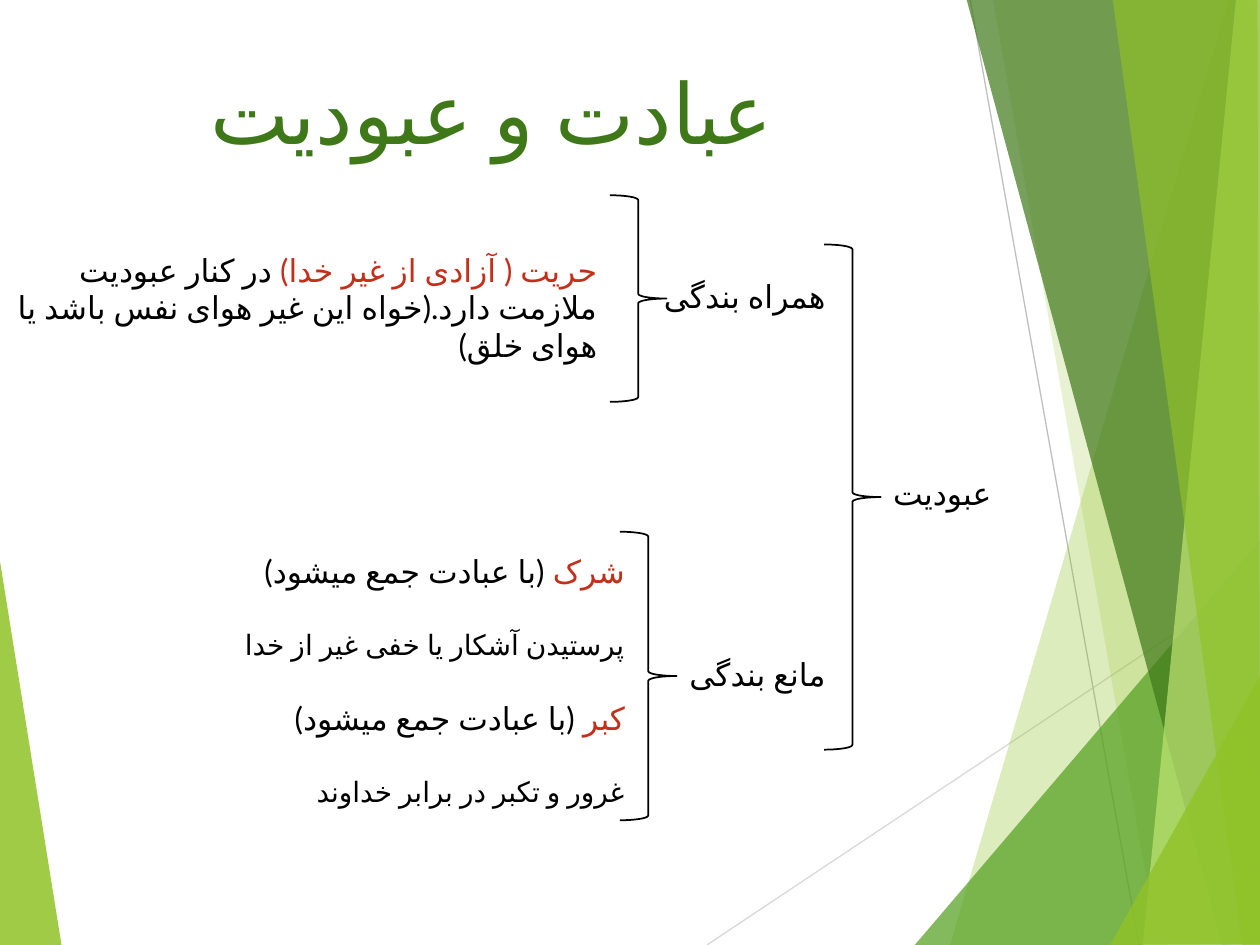
from dataclasses import dataclass

from lxml import etree
from pptx import Presentation
from pptx.dml.color import RGBColor
from pptx.enum.shapes import MSO_CONNECTOR, MSO_SHAPE
from pptx.enum.text import MSO_ANCHOR, MSO_AUTO_SIZE, PP_ALIGN
from pptx.oxml.ns import qn
from pptx.util import Inches, Pt

STRAIGHT = MSO_CONNECTOR.STRAIGHT
RIGHT_BRACE = MSO_SHAPE.RIGHT_BRACE
TOP = MSO_ANCHOR.TOP
GROW = MSO_AUTO_SIZE.SHAPE_TO_FIT_TEXT
LEFT, CENTER, RIGHT = PP_ALIGN.LEFT, PP_ALIGN.CENTER, PP_ALIGN.RIGHT

WIDTH, HEIGHT = Inches(10), Inches(7.5)
COLUMNS, ROWS = 100, 75
BRACE_COLUMNS = 4.5


@dataclass(frozen=True)
class Theme:
    font: str = "Lato"
    language: str = "fa-IR"
    title_size: float = 48
    body_size: float = 18
    note_size: float = 16
    blank_line: float = 21.6
    ink: str = "000000"
    accent: str = "C42F1A"
    dark_green: str = "3F7819"
    mid_green: str = "54A021"
    green: str = "90C226"
    light_green: str = "C0E474"
    hairline: str = "D9D9D9"
    hairline_dark: str = "BFBFBF"


THEME = Theme()


@dataclass(frozen=True)
class Area:
    """A rectangle in grid columns and rows."""
    column: float
    row: float
    columns: float
    rows: float

    def box(self) -> tuple:
        return x(self.column), y(self.row), x(self.columns), y(self.rows)


@dataclass(frozen=True)
class Facet:
    color: str
    opacity: int
    corners: tuple


@dataclass(frozen=True)
class Ray:
    color: str
    start: tuple
    end: tuple


@dataclass(frozen=True)
class Span:
    text: str
    color: str = THEME.ink
    size: float = THEME.body_size


LEFT_FACET = Facet(THEME.green, 85, ((-0.1, 43.9), (4.9, 75.1), (-0.1, 75)))
RAYS = (
    Ray(THEME.hairline, (56.1, 75), (100.1, 45.7)),
    Ray(THEME.hairline_dark, (77, 0), (90.4, 75)),
)
RIGHT_FACETS = (
    Facet(THEME.green, 30, ((97.5, 0), (75.4, 75), (100.2, 75.1), (100.1, 0.1))),
    Facet(THEME.green, 20, ((78.8, -0.1), (91.9, 75), (100.1, 75), (100.1, -0.1))),
    Facet(THEME.mid_green, 72, ((72.6, 75), (100, 42.9), (100.1, 75))),
    Facet(THEME.dark_green, 70, ((76.7, -0.1), (97, 75), (100.1, 74.9), (100.1, -0.1))),
    Facet(THEME.light_green, 70, ((98.1, -0.1), (90.7, 75), (100.1, 75), (100, -0.1))),
    Facet(THEME.green, 65, ((88.3, -0.1), (98.6, 75), (100, 75), (99.8, -0.1))),
    Facet(THEME.green, 80, ((88.1, 75), (100.1, 53.5), (100.1, 74.9))),
)
BRACES = (
    Area(65.4, 19.4, BRACE_COLUMNS, 40.1),
    Area(49.2, 42.2, BRACE_COLUMNS, 22.9),
    Area(48.4, 15.5, BRACE_COLUMNS, 16.4),
)

TITLE = [[Span("عبادت و عبودیت", THEME.dark_green, THEME.title_size)]]
ROOT = [[Span("عبودیت")]]
BRANCHES = [[Span("همراه بندگی")], [Span("مانع بندگی")]]
COMPANION = [[
    Span("حریت ( آزادی از غیر خدا) ", THEME.accent),
    Span("در کنار عبودیت ملازمت دارد.(خواه این غیر هوای نفس باشد یا هوای خلق)"),
]]
COMPATIBLE = Span("(با عبادت جمع میشود)")
OBSTACLES = [
    [Span("شرک ", THEME.accent), COMPATIBLE],
    [Span("پرستیدن آشکار یا خفی غیر از خدا", size=THEME.note_size)],
    [Span("کبر ", THEME.accent), COMPATIBLE],
    [Span("غرور و تکبر در برابر خداوند", size=THEME.note_size)],
]


def x(columns: float) -> int:
    return round(WIDTH * columns / COLUMNS)


def y(rows: float) -> int:
    return round(HEIGHT * rows / ROWS)


def draw_facet(slide, facet: Facet) -> None:
    points = [(x(column), y(row)) for column, row in facet.corners]
    builder = slide.shapes.build_freeform(*points[0], scale=1.0)
    builder.add_line_segments(points[1:], close=True)
    shape = builder.convert_to_shape()
    shape.shadow.inherit = False
    shape.line.fill.background()
    shape.fill.solid()
    shape.fill.fore_color.rgb = RGBColor.from_string(facet.color)
    color = shape.fill._xPr.find(qn("a:solidFill"))[0]
    etree.SubElement(color, qn("a:alpha"), val=str(facet.opacity * 1000))


def draw_ray(slide, ray: Ray) -> None:
    (x1, y1), (x2, y2) = ray.start, ray.end
    line = slide.shapes.add_connector(STRAIGHT, x(x1), y(y1), x(x2), y(y2))
    line.line.color.rgb = RGBColor.from_string(ray.color)
    line.line.width = Pt(0.75)
    etree.SubElement(line._element.spPr, qn("a:effectLst"))


def draw_brace(slide, area: Area) -> None:
    brace = slide.shapes.add_shape(RIGHT_BRACE, *area.box())
    brace.shadow.inherit = False
    brace.fill.background()
    brace.line.color.rgb = RGBColor.from_string(THEME.ink)
    brace.line.width = Pt(1)


def write(shape, area: Area, paragraphs: list, *, align=RIGHT,
          rtl: bool = True, gap: float = 0) -> None:
    """Place the shape and fill it with paragraphs, gap points apart."""
    shape.left, shape.top, shape.width, shape.height = area.box()
    frame = shape.text_frame
    frame.word_wrap = True
    frame.auto_size = GROW
    frame.vertical_anchor = TOP
    for index, spans in enumerate(paragraphs):
        paragraph = frame.add_paragraph() if index else frame.paragraphs[0]
        paragraph.alignment = align
        paragraph.line_spacing = 1.0
        paragraph.space_before = Pt(gap if index else 0)
        paragraph.space_after = Pt(0)
        properties = paragraph._p.get_or_add_pPr()
        properties.set("marL", "0")
        properties.set("indent", "0")
        properties.set("rtl", str(int(rtl)))
        etree.SubElement(properties, qn("a:buNone"))
        for span in spans:
            run = paragraph.add_run()
            run.text = span.text
            run.font.name = THEME.font
            run.font.size = Pt(span.size)
            run.font.color.rgb = RGBColor.from_string(span.color)
            run.font._element.set("lang", THEME.language)
            etree.SubElement(run.font._element, qn("a:cs"), typeface=THEME.font)


def main() -> None:
    deck = Presentation()
    deck.slide_width, deck.slide_height = WIDTH, HEIGHT
    slide = deck.slides.add_slide(deck.slide_layouts[1])

    draw_facet(slide, LEFT_FACET)
    for ray in RAYS:
        draw_ray(slide, ray)
    for facet in RIGHT_FACETS:
        draw_facet(slide, facet)
    for brace in BRACES:
        draw_brace(slide, brace)

    def label(area: Area, paragraphs: list, **text_format) -> None:
        textbox = slide.shapes.add_textbox(*area.box())
        write(textbox, area, paragraphs, **text_format)

    write(slide.shapes.title, Area(4.7, 4.3, 68.7, 9.1), TITLE,
          align=CENTER, rtl=False)
    write(slide.placeholders[1], Area(3.8, 43.3, 46.8, 21.9), OBSTACLES,
          gap=THEME.blank_line)
    label(Area(69.9, 37.1, 36.1, 4), ROOT, align=LEFT, rtl=False)
    label(Area(46.4, 21.5, 20.1, 34.3), BRANCHES, gap=9 * THEME.blank_line)
    label(Area(0, 19.4, 48.4, 7.1), COMPANION)

    deck.save("out.pptx")


if __name__ == "__main__":
    main()
